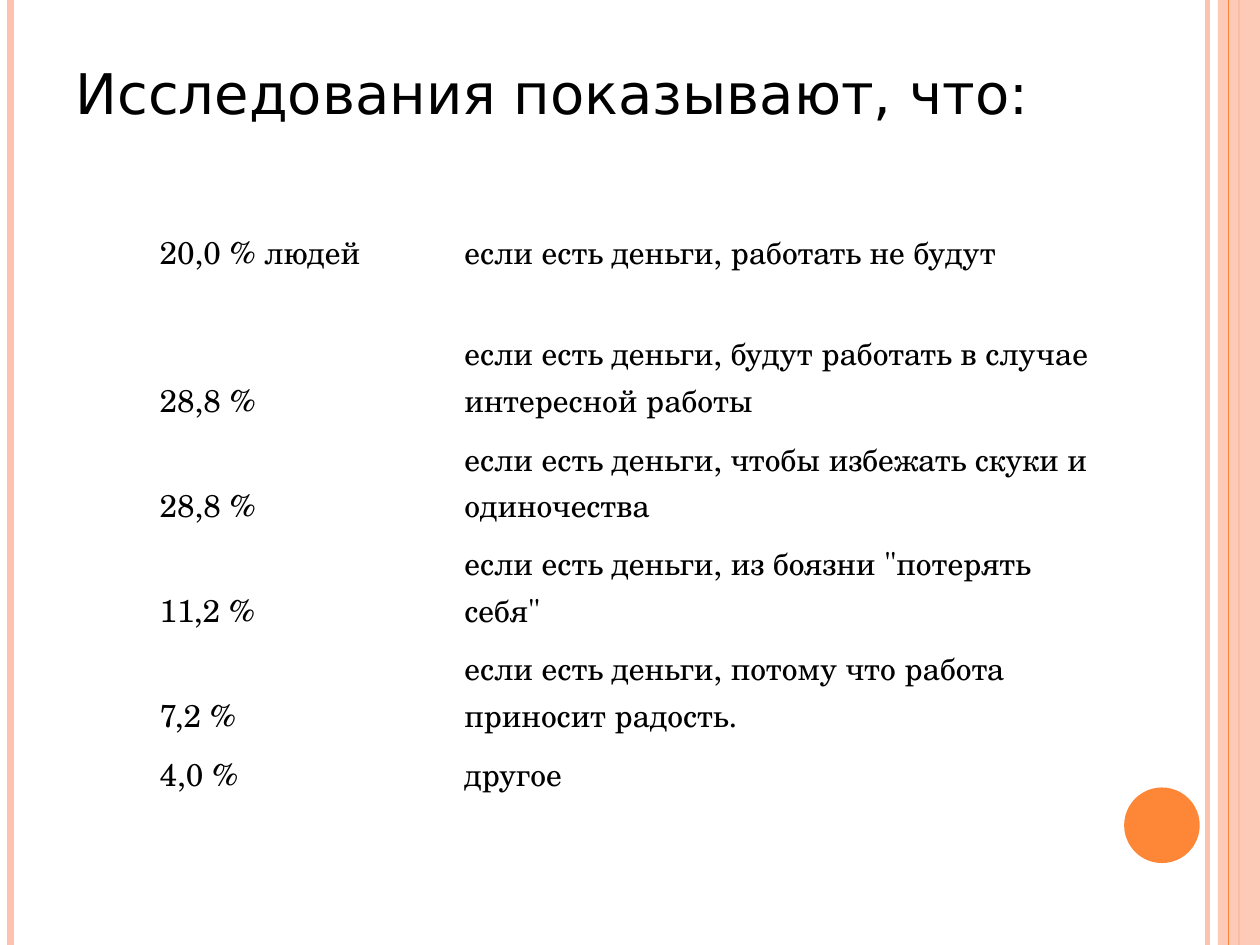
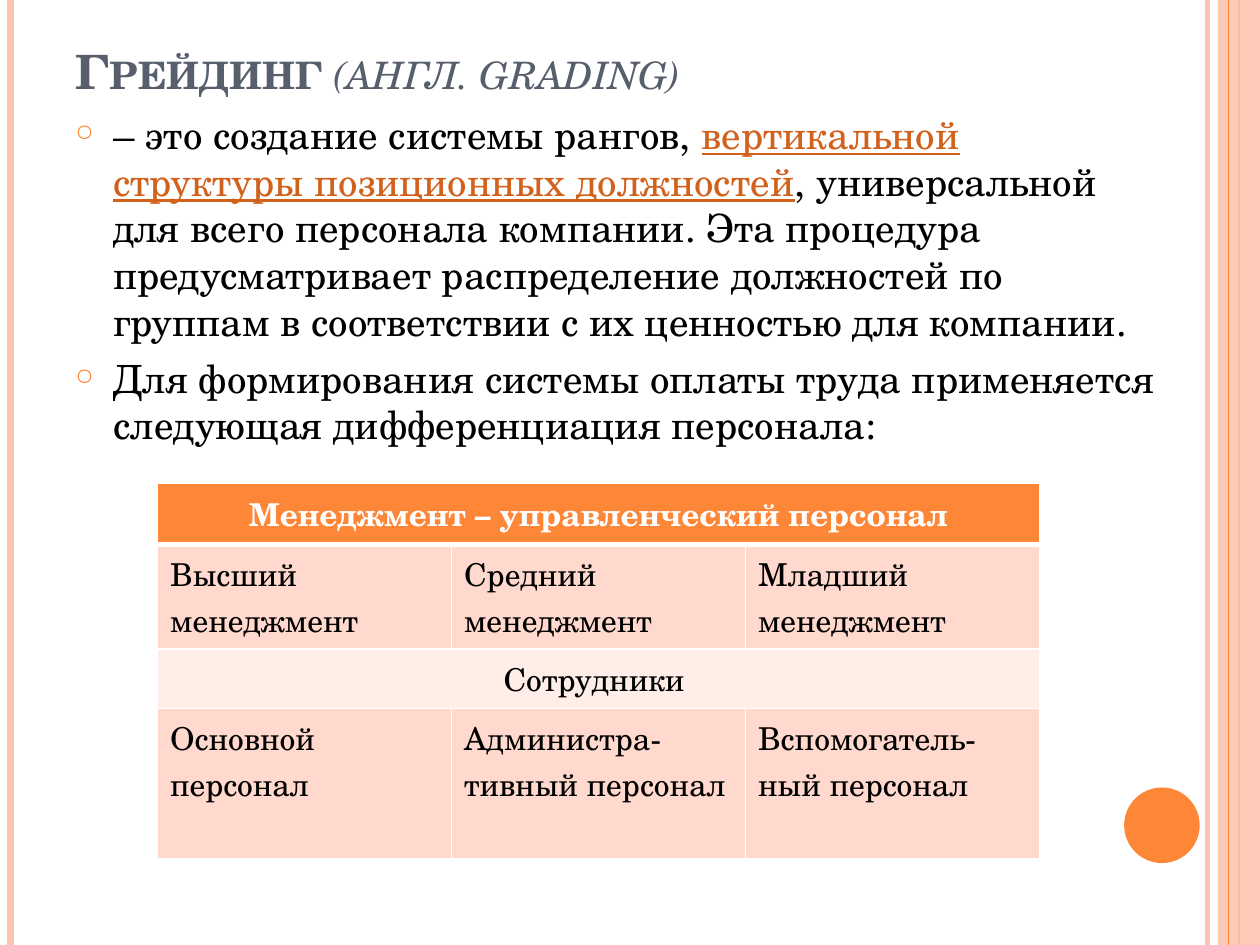
from lxml.etree import SubElement
from pptx import Presentation
from pptx.dml.color import RGBColor
from pptx.enum.shapes import MSO_CONNECTOR, MSO_SHAPE
from pptx.enum.text import MSO_ANCHOR, PP_ALIGN
from pptx.oxml import parse_xml
from pptx.oxml.ns import nsdecls, qn
from pptx.util import Pt

PEACH = RGBColor(0xFE, 0xC3, 0xAE)
ORANGE = RGBColor(0xFE, 0x86, 0x37)
SLATE = RGBColor(0x57, 0x5F, 0x6D)
RUST = RGBColor(0xD2, 0x61, 0x1C)
BLACK = RGBColor(0, 0, 0)
WHITE = RGBColor(0xFF, 0xFF, 0xFF)
PINK = RGBColor(0xFF, 0xD9, 0xCE)
PALE_PINK = RGBColor(0xFF, 0xED, 0xE8)
SERIF = "TeX Gyre Schola"
SANS = "DejaVu Sans"
WIDTH, HEIGHT = 720, 540


def format_run(run, size, color=BLACK, name=SERIF, bold=False):
    run.font.size = Pt(size)
    run.font.color.rgb = color
    run.font.name = name
    run.font.bold = bold


def add_text_frame(slide, left, top, width, height, anchor):
    box = slide.shapes.add_textbox(Pt(left), Pt(top), Pt(width), Pt(height))
    box.text_frame.word_wrap = True
    box.text_frame.vertical_anchor = anchor
    return box.text_frame


presentation = Presentation()
presentation.slide_width = Pt(WIDTH)
presentation.slide_height = Pt(HEIGHT)
blank_layout = presentation.slide_layouts[6]
research_slide = presentation.slides.add_slide(blank_layout)
grading_slide = presentation.slides.add_slide(blank_layout)

stripes = [(690, PEACH, 3), (6, PEACH, 4.5), (708, ORANGE, 1.5), (702, ORANGE, 0.75)]
for slide in presentation.slides:
    for index, (x, color, weight) in enumerate(stripes):
        if index == 3:
            band = slide.shapes.add_shape(MSO_SHAPE.RECTANGLE, Pt(696), 0, Pt(24), Pt(HEIGHT))
            band.shadow.inherit = False
            band.fill.solid()
            band.fill.fore_color.rgb = PEACH
            band.line.fill.background()
            band_color = band.fill._xPr.find(qn("a:solidFill"))[0]
            SubElement(band_color, qn("a:alpha"), val="87000")
        stripe = slide.shapes.add_connector(MSO_CONNECTOR.STRAIGHT, Pt(x), 0, Pt(x), Pt(HEIGHT))
        stripe.line.color.rgb = color
        stripe.line.width = Pt(weight)
        SubElement(stripe._element.spPr, qn("a:effectLst"))
    circle = slide.shapes.add_shape(MSO_SHAPE.OVAL, Pt(642.4), Pt(450), Pt(43.2), Pt(43.2))
    circle.shadow.inherit = False
    circle.fill.solid()
    circle.fill.fore_color.rgb = ORANGE
    circle.line.fill.background()

title_frame = add_text_frame(research_slide, 36, 21.6, 588, 90, MSO_ANCHOR.BOTTOM)
title_frame.margin_bottom = Pt(40)
title_frame.text = "Исследования показывают, что:"
format_run(title_frame.paragraphs[0].runs[0], 32, name=SANS)

answers = [
    ("20,0 % людей", "если есть деньги, работать не будут", 58.6),
    ("28,8 %", "если есть деньги, будут работать в случае интересной работы", 84.4),
    ("28,8 %", "если есть деньги, чтобы избежать скуки и одиночества", 60),
    ("11,2 %", 'если есть деньги, из боязни "потерять себя"', 60),
    ("7,2 %", "если есть деньги, потому что работа приносит радость.", 60),
    ("4,0 %", "другое", 33.8),
]
answer_table = research_slide.shapes.add_table(
    len(answers), 2, Pt(84), Pt(102.2), Pt(546), Pt(354)).table
answer_table.first_row = False
answer_table.horz_banding = False
answer_table.columns[0].width = Pt(174.2)
answer_table.columns[1].width = Pt(371.8)
for row_index, (share, answer, row_height) in enumerate(answers):
    answer_table.rows[row_index].height = Pt(row_height)
    for column_index, text in enumerate((share, answer)):
        cell = answer_table.cell(row_index, column_index)
        cell.fill.background()
        cell.vertical_anchor = MSO_ANCHOR.BOTTOM
        cell.text_frame.text = text
        format_run(cell.text_frame.paragraphs[0].runs[0], 18)
        for edge in ("lnB", "lnT", "lnR", "lnL"):
            cell._tc.tcPr.insert(0, parse_xml(
                f'<a:{edge} {nsdecls("a")} w="0"><a:noFill/></a:{edge}>'))

heading_frame = add_text_frame(grading_slide, 36, 22, 588, 38.2, MSO_ANCHOR.BOTTOM)
heading = heading_frame.paragraphs[0]
for text, is_term in (("Грейдинг ", True), ("(англ. grading)", False)):
    run = heading.add_run()
    run.text = text
    format_run(run, 27, SLATE, bold=is_term)
    run.font.italic = not is_term
    run.font._element.set("cap", "small")

body_frame = add_text_frame(grading_slide, 36, 59.8, 634, 203.8, MSO_ANCHOR.TOP)
body_paragraphs = [
    [
        ("– это создание системы рангов, ", False),
        ("вертикальной структуры позиционных должностей", True),
        (", универсальной для всего персонала компании. Эта процедура предусматривает "
         "распределение должностей по группам в соответствии с их ценностью для компании.", False),
    ],
    [("Для формирования системы оплаты труда применяется следующая "
      "дифференциация персонала:", False)],
]
for index, parts in enumerate(body_paragraphs):
    paragraph = body_frame.add_paragraph() if index else body_frame.paragraphs[0]
    paragraph.space_before = Pt(6)
    for text, is_emphasis in parts:
        run = paragraph.add_run()
        run.text = text
        format_run(run, 22.2, RUST if is_emphasis else BLACK)
        run.font.underline = is_emphasis
    properties = paragraph._p.get_or_add_pPr()
    properties.set("marL", str(Pt(21.6)))
    properties.set("indent", str(Pt(-21.6)))
    bullet_color = SubElement(properties, qn("a:buClr"))
    SubElement(bullet_color, qn("a:srgbClr"), val=str(ORANGE))
    SubElement(properties, qn("a:buSzPct"), val="60000")
    SubElement(properties, qn("a:buChar"), char="○")

staff_rows = [
    (["Менеджмент – управленческий персонал"], ORANGE, 35),
    (["Высший менеджмент", "Средний менеджмент", "Младший менеджмент"], PINK, 60),
    (["Сотрудники "], PALE_PINK, 34),
    (["Основной персонал", "Администра-тивный персонал", "Вспомогатель-ный персонал"], PINK, 86),
]
staff_table = grading_slide.shapes.add_table(
    len(staff_rows), 3, Pt(90), Pt(276), Pt(504), Pt(215)).table
for row_index, (texts, color, row_height) in enumerate(staff_rows):
    staff_table.rows[row_index].height = Pt(row_height)
    is_header = row_index == 0
    for column_index in range(3):
        cell = staff_table.cell(row_index, column_index)
        cell.fill.solid()
        cell.fill.fore_color.rgb = color
        for edge in ("lnB", "lnT", "lnR", "lnL"):
            is_thick = (row_index, edge) in ((0, "lnB"), (1, "lnT"))
            cell._tc.tcPr.insert(0, parse_xml(
                f'<a:{edge} {nsdecls("a")} w="{Pt(3 if is_thick else 1)}"><a:solidFill>'
                f'<a:srgbClr val="{WHITE}"/></a:solidFill></a:{edge}>'))
    if len(texts) == 1:
        staff_table.cell(row_index, 0).merge(staff_table.cell(row_index, 2))
    for column_index, text in enumerate(texts):
        cell = staff_table.cell(row_index, column_index)
        cell.text_frame.text = text
        paragraph = cell.text_frame.paragraphs[0]
        if len(texts) == 1:
            paragraph.alignment = PP_ALIGN.CENTER
        format_run(paragraph.runs[0], 18, WHITE if is_header else BLACK, bold=is_header)

presentation.save("out.pptx")
